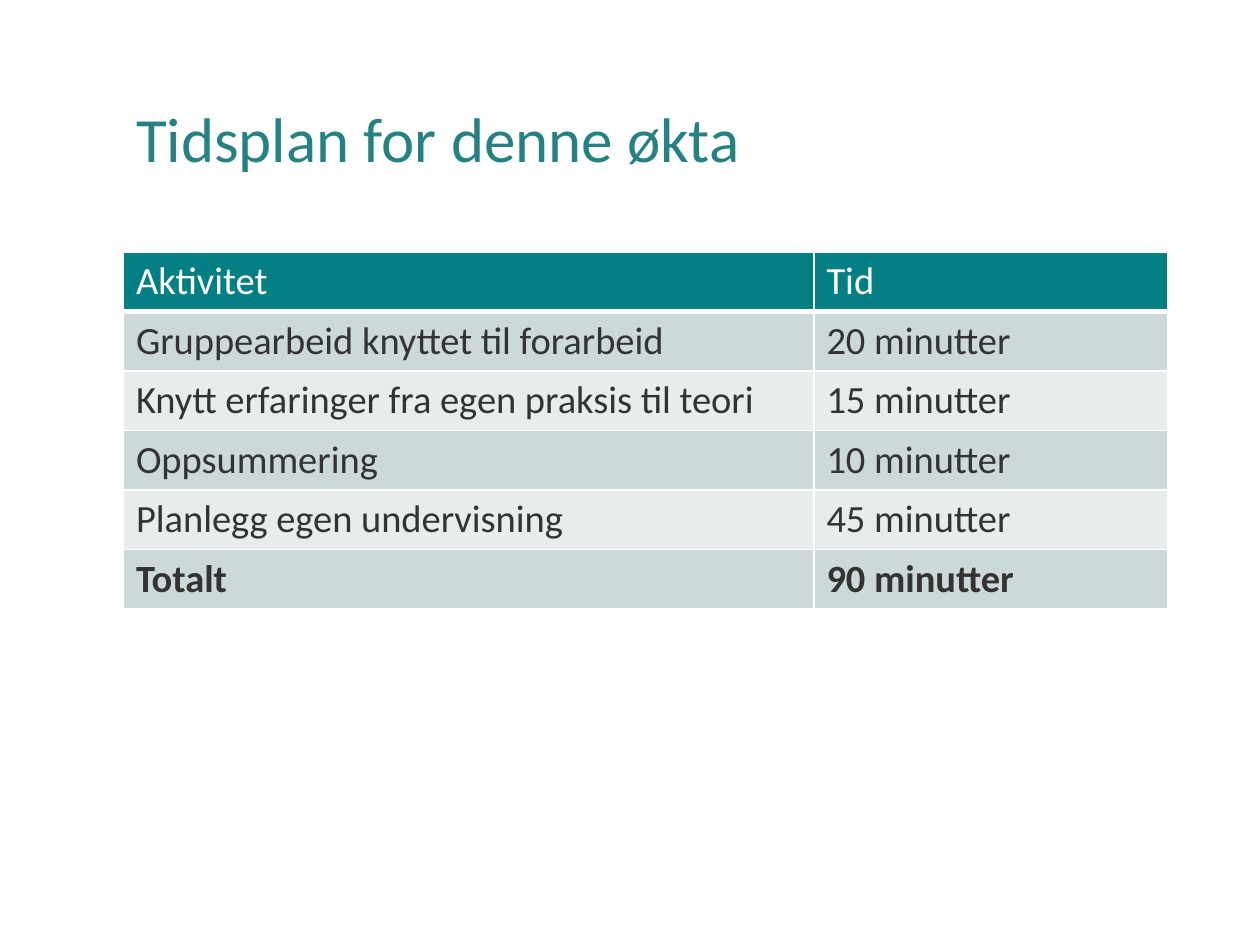
import dataclasses

import lxml.etree
import pptx
import pptx.dml.color
import pptx.enum.text
import pptx.oxml.ns
import pptx.util


@dataclasses.dataclass(frozen=True)
class Theme:
    font: str = "Calibri"
    title_color: str = "268183"
    header_fill: str = "037F83"
    band_fills: tuple = ("CCD8D9", "E7ECED")
    body_color: str = "333333"
    white: str = "FFFFFF"
    title_size: int = 36
    table_size: int = 22
    rule: int = 1
    header_rule: int = 3


THEME = Theme()
LEFT, WIDTH = 0.98, 8.29
TITLE_TOP, TITLE_HEIGHT = 0.4, 1.45
TABLE_TOP, ROW_HEIGHT = 2, 0.47
COLUMN_WIDTHS = (5.48, 2.81)
SCHEDULE = (
    ("Aktivitet", "Tid"),
    ("Gruppearbeid knyttet til forarbeid", "20 minutter"),
    ("Knytt erfaringer fra egen praksis til teori", "15 minutter"),
    ("Oppsummering", "10 minutter"),
    ("Planlegg egen undervisning", "45 minutter"),
    ("Totalt", "90 minutter"),
)


def rgb(color):
    return pptx.dml.color.RGBColor.from_string(color)


def write_text(frame, text, *, size, color, bold=False, spacing=None):
    paragraph = frame.paragraphs[0]
    paragraph.alignment = pptx.enum.text.PP_ALIGN.LEFT
    if spacing:
        paragraph.line_spacing = spacing
    run = paragraph.add_run()
    run.text = text
    run.font.name = THEME.font
    run.font.size = pptx.util.Pt(size)
    run.font.bold = bold
    run.font.color.rgb = rgb(color)


def draw_borders(cell, top, bottom):
    """Give the cell white rules; widths are in points."""
    qn = pptx.oxml.ns.qn
    properties = cell._tc.get_or_add_tcPr()
    widths = {"L": THEME.rule, "R": THEME.rule, "T": top, "B": bottom}
    for side, width in widths.items():
        line = lxml.etree.SubElement(
            properties, qn(f"a:ln{side}"), w=str(pptx.util.Pt(width)))
        fill = lxml.etree.SubElement(line, qn("a:solidFill"))
        lxml.etree.SubElement(fill, qn("a:srgbClr"), val=THEME.white)


def add_title(slide, text):
    title = slide.shapes.title
    title.left, title.top, title.width, title.height = map(
        pptx.util.Inches, (LEFT, TITLE_TOP, WIDTH, TITLE_HEIGHT))
    title.text_frame.vertical_anchor = pptx.enum.text.MSO_ANCHOR.MIDDLE
    write_text(title.text_frame, text, size=THEME.title_size,
               color=THEME.title_color, spacing=0.9)


def add_schedule(slide, rows):
    table = slide.shapes.add_table(
        len(rows), len(COLUMN_WIDTHS),
        *map(pptx.util.Inches,
             (LEFT, TABLE_TOP, WIDTH, ROW_HEIGHT * len(rows)))).table
    for column, width in zip(table.columns, COLUMN_WIDTHS):
        column.width = pptx.util.Inches(width)

    for r, row in enumerate(rows):
        table.rows[r].height = pptx.util.Inches(ROW_HEIGHT)
        header, total = r == 0, r == len(rows) - 1
        fill = THEME.header_fill if header else THEME.band_fills[(r - 1) % 2]
        for c, text in enumerate(row):
            cell = table.cell(r, c)
            # Borders come before the fill in the cell's properties
            draw_borders(cell,
                         top=THEME.header_rule if r == 1 else THEME.rule,
                         bottom=THEME.header_rule if header else THEME.rule)
            cell.fill.solid()
            cell.fill.fore_color.rgb = rgb(fill)
            write_text(cell.text_frame, text, size=THEME.table_size,
                       color=THEME.white if header else THEME.body_color,
                       bold=total)


def main():
    deck = pptx.Presentation()
    deck.slide_width = pptx.util.Inches(10)
    deck.slide_height = pptx.util.Inches(7.5)
    slide = deck.slides.add_slide(deck.slide_layouts.get_by_name("Title Only"))
    add_title(slide, "Tidsplan for denne økta")
    add_schedule(slide, SCHEDULE)
    deck.save("out.pptx")


if __name__ == "__main__":
    main()
